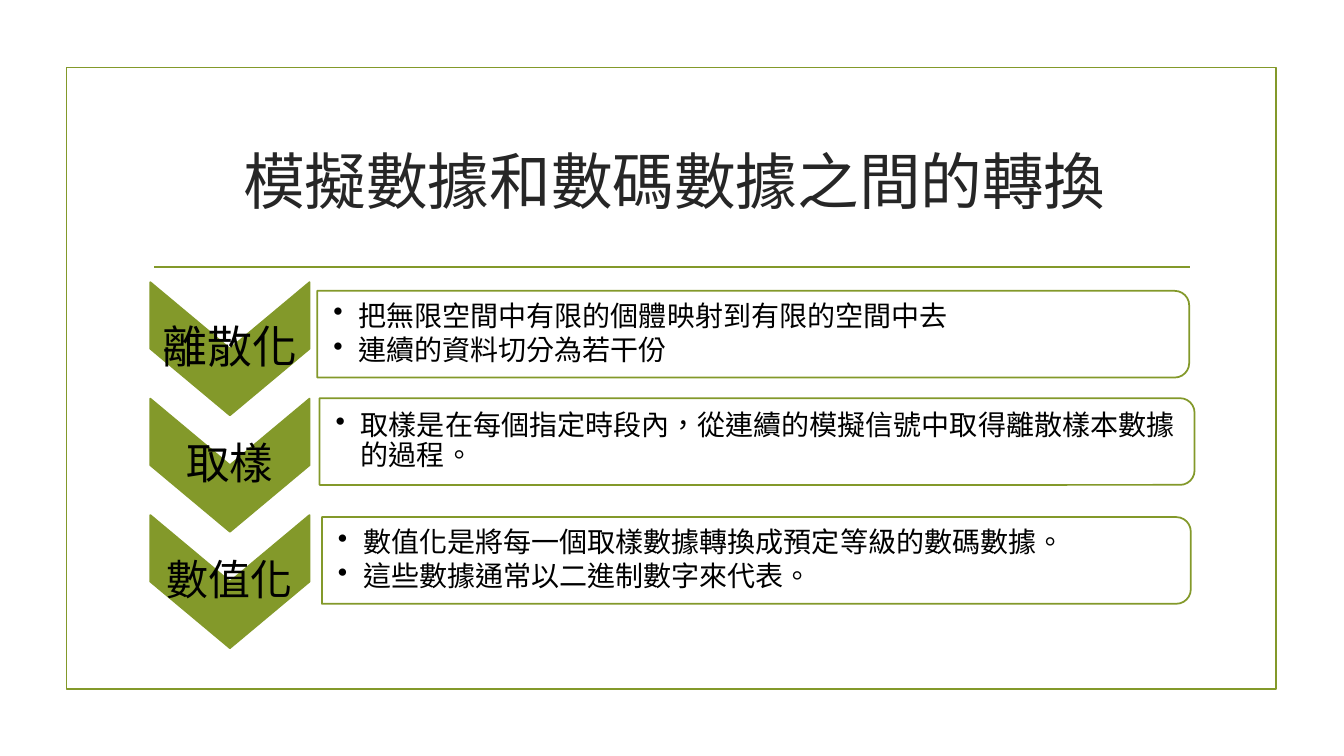
from dataclasses import dataclass

from lxml.etree import SubElement
from pptx import Presentation
from pptx.dml.color import RGBColor
from pptx.enum.lang import MSO_LANGUAGE_ID as LANG
from pptx.enum.shapes import MSO_CONNECTOR, MSO_SHAPE
from pptx.enum.text import MSO_ANCHOR, PP_ALIGN
from pptx.oxml.ns import qn
from pptx.util import Inches, Pt

FONT = "Times New Roman"
GREEN, WHITE, BLACK, DARK = "83992A", "FFFFFF", "000000", "262626"


@dataclass
class Box:
    """A place on the slide, in percent of its width and height."""
    x: float
    y: float
    w: float
    h: float


@dataclass
class Step:
    name: str
    size: int
    bar: Box
    points: list[str]


CHEVRON = Box(11.18, 37.33, 11.85, 17.6)
CHEVRON_PITCH = 15.4
BAR_H = 11.47
STEPS = [
    Step("離散化", 32, Box(23.6, 38.47, 64.88, BAR_H),
         ["把無限空間中有限的個體映射到有限的空間中去", "連續的資料切分為若干份"]),
    Step("取樣", 31, Box(23.78, 52.67, 65.1, BAR_H),
         ["取樣是在每個指定時段內，從連續的模擬信號中取得離散樣本數據的過程。"]),
    Step("數值化", 30, Box(23.95, 68.4, 64.65, BAR_H),
         ["數值化是將每一個取樣數據轉換成預定等級的數碼數據。",
          "這些數據通常以二進制數字來代表。"]),
]

prs = Presentation()
prs.slide_width, prs.slide_height = Inches(13.33), Inches(7.5)
s = prs.slides.add_slide(prs.slide_layouts[6])


def px(share: float) -> int:
    return round(prs.slide_width * share / 100)


def py(share: float) -> int:
    return round(prs.slide_height * share / 100)


def rgb(value: str) -> RGBColor:
    return RGBColor.from_string(value)


def add_outline(kind: MSO_SHAPE, box: Box, fill: str | None = None,
                alpha: int = 100, turned: bool = False) -> None:
    """Draw a green-lined shape that covers box, turned a quarter if asked."""
    x, y, w, h = px(box.x), py(box.y), px(box.w), py(box.h)
    if turned:
        x, y, w, h = x + (w - h) // 2, y + (h - w) // 2, h, w
    sp = s.shapes.add_shape(kind, x, y, w, h)
    sp.rotation = 90 if turned else 0
    sp.shadow.inherit = False
    sp.line.color.rgb, sp.line.width = rgb(GREEN), Pt(1.25)
    if fill is None:
        sp.fill.background()
        return
    sp.fill.solid()
    sp.fill.fore_color.rgb = rgb(fill)
    if alpha < 100:
        clr = sp._element.spPr.find(qn("a:solidFill"))[0]
        SubElement(clr, qn("a:alpha"), val=str(alpha * 1000))


def add_rule(x1: float, x2: float, y: float) -> None:
    c = s.shapes.add_connector(MSO_CONNECTOR.STRAIGHT, px(x1), py(y), px(x2), py(y))
    c.line.color.rgb, c.line.width = rgb(GREEN), Pt(1.25)
    SubElement(c._element.spPr, qn("a:effectLst"))


def add_text(box: Box, lines: list[str], size: int, color: str = BLACK,
             margins: tuple[float, float] = (0.02, 0.02),
             spacing: float = 0.9, after: float = 0, bullets: bool = False) -> None:
    """Write lines in box; margins are the left one and the other three, in inches."""
    tf = s.shapes.add_textbox(px(box.x), py(box.y), px(box.w), py(box.h)).text_frame
    left, rest = (Inches(m) for m in margins)
    frame = dict(word_wrap=True, vertical_anchor=MSO_ANCHOR.MIDDLE, margin_left=left,
                 margin_right=rest, margin_top=rest, margin_bottom=rest)
    for key, value in frame.items():
        setattr(tf, key, value)
    for i, line in enumerate(lines):
        p = tf.add_paragraph() if i else tf.paragraphs[0]
        p.alignment = PP_ALIGN.LEFT if bullets else PP_ALIGN.CENTER
        p.line_spacing, p.space_after = spacing, Pt(after)
        if bullets:
            p.level = 1
            pPr = p._p.get_or_add_pPr()
            pPr.set("marL", str(Inches(0.25)))
            pPr.set("indent", str(-Inches(0.25)))
            SubElement(pPr, qn("a:buChar"), char="•")
        r = p.add_run()
        r.text = line
        font = dict(name=FONT, size=Pt(size), language_id=LANG.TRADITIONAL_CHINESE)
        for key, value in font.items():
            setattr(r.font, key, value)
        r.font.color.rgb = rgb(color)


def add_step(row: int, step: Step) -> None:
    chevron = Box(CHEVRON.x, CHEVRON.y + row * CHEVRON_PITCH, CHEVRON.w, CHEVRON.h)
    add_outline(MSO_SHAPE.CHEVRON, chevron, GREEN, turned=True)
    add_text(chevron, [step.name], step.size)
    bar = step.bar
    add_outline(MSO_SHAPE.ROUND_2_SAME_RECTANGLE, bar, WHITE, alpha=90, turned=True)
    inner = Box(bar.x, bar.y + 0.6, bar.w - 0.3, bar.h - 1.2)
    add_text(inner, step.points, 20, margins=(0.16, 0.01), after=3, bullets=True)


def main() -> None:
    add_outline(MSO_SHAPE.RECTANGLE, Box(4.95, 8.93, 90, 82.27))
    add_rule(11.47, 88.57, 35.33)
    add_text(Box(10.65, 14.27, 78.75, 19.07), ["模擬數據和數碼數據之間的轉換"], 44, DARK,
             margins=(0.1, 0.05), spacing=1.0)
    for row, step in enumerate(STEPS):
        add_step(row, step)
    prs.save("out.pptx")


if __name__ == "__main__":
    main()
